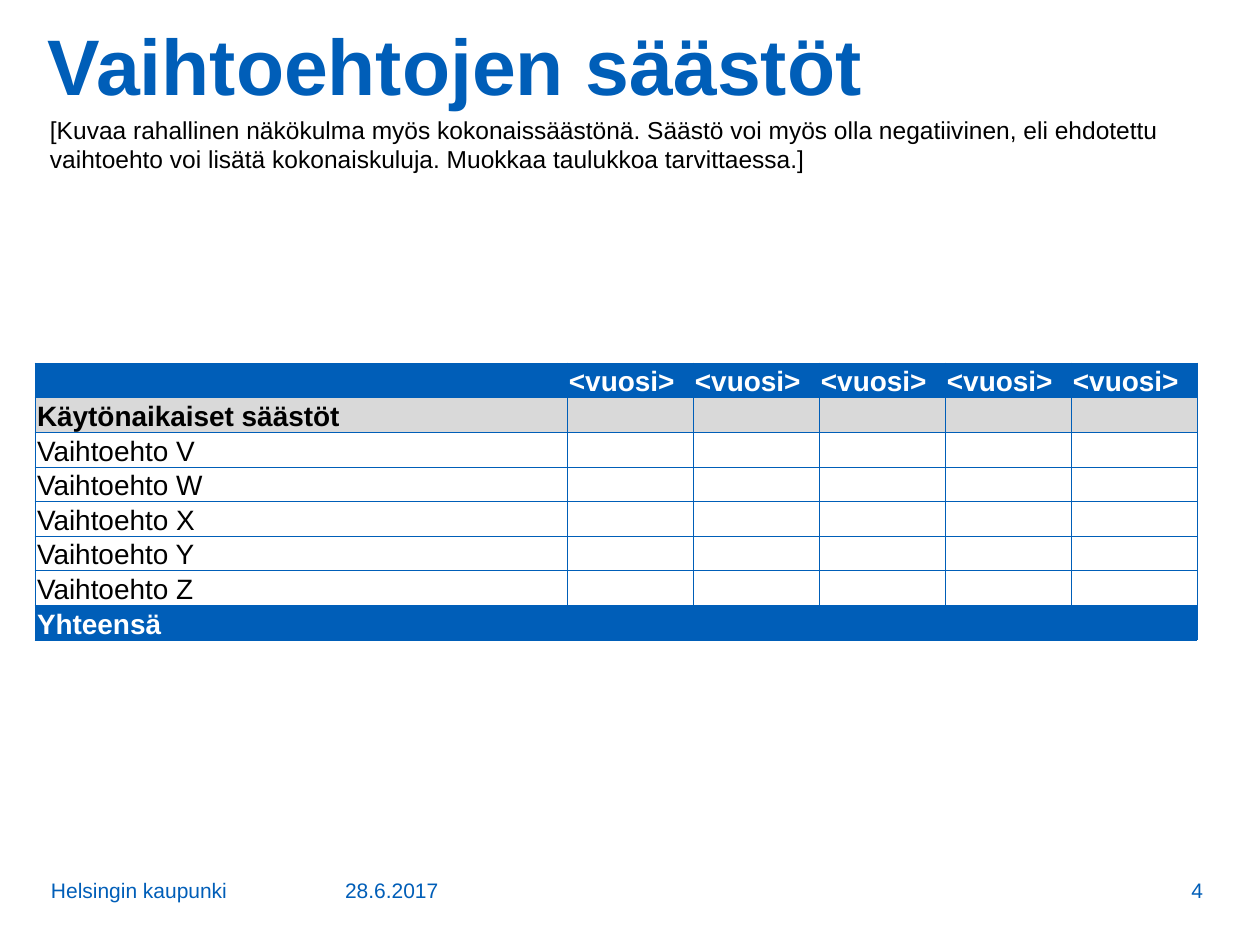
from lxml.etree import SubElement
from pptx import Presentation
from pptx.dml.color import RGBColor
from pptx.enum.text import MSO_ANCHOR, PP_ALIGN
from pptx.oxml.ns import qn
from pptx.util import Pt

EMU = 914400 / 126  # one px
HEX = {"blue": "005EB8", "grey": "D9D9D9", "black": "000000",
       "white": "FFFFFF"}


def style(para, size, color, bold=False):
    para.font.name = "Arial"
    para.font.size = Pt(size)
    para.font.bold = bold
    para.font.color.rgb = RGBColor.from_string(HEX[color])


def add_text(box, text, size, color, inset, anchor=MSO_ANCHOR.TOP, bold=False):
    """Add a wrapped text box; box and inset (side, top and bottom) are in px."""
    frame = slide.shapes.add_textbox(*(int(n * EMU) for n in box)).text_frame
    frame.word_wrap = True
    frame.vertical_anchor = anchor
    side, edge = (int(n * EMU) for n in inset)
    frame.margin_left = frame.margin_right = side
    frame.margin_top = frame.margin_bottom = edge
    para = frame.paragraphs[0]
    para.text = text
    style(para, size, color, bold)
    return para


deck = Presentation()
deck.slide_width = int(1260 * EMU)
deck.slide_height = int(945 * EMU)
slide = deck.slides.add_slide(deck.slide_layouts[6])

title = add_text((35, 31, 1162, 184), "Vaihtoehtojen säästöt", 45, "blue",
                 (13, 0), bold=True)
title.line_spacing = 0.85

# Savings table: a name column and five year columns
names = ["", "Käytönaikaiset säästöt", *(f"Vaihtoehto {c}" for c in "VWXYZ"),
         "Yhteensä"]
years = 5
last = len(names) - 1
frame = slide.shapes.add_table(len(names), years + 1, int(35 * EMU),
                               int(363 * EMU), int(1162 * EMU), int(256 * EMU))
table = frame.table
table.horz_banding = False
for i, col in enumerate(table.columns):
    col.width = int((126 if i else 532) * EMU)

for r, name in enumerate(names):
    table.rows[r].height = int(32 * EMU)
    band = r in (0, last)
    fill = "blue" if band else "grey" if r == 1 else "white"
    for c in range(years + 1):
        cell = table.cell(r, c)
        cell.fill.solid()
        cell.fill.fore_color.rgb = RGBColor.from_string(HEX[fill])
        cell.vertical_anchor = MSO_ANCHOR.BOTTOM
        cell.margin_left = cell.margin_right = int(2 * EMU)
        cell.margin_top = int(EMU)
        cell.margin_bottom = 0
        para = cell.text_frame.paragraphs[0]
        para.text = name if c == 0 else "<vuosi>" if r == 0 else ""
        para.line_spacing = 0.94
        style(para, 16, "white" if band else "black", band or r == 1)

        # Borders go before the fill in the cell properties
        props = cell._tc.get_or_add_tcPr()
        for n, tag in enumerate(("a:lnL", "a:lnR", "a:lnT", "a:lnB")):
            line = SubElement(props, qn(tag), w=str(Pt(0.5)))
            props.insert(n, line)
            paint = SubElement(line, qn("a:solidFill"))
            SubElement(paint, qn("a:srgbClr"), val=HEX["blue"])

# Footer
for box, text, align in [
    ((333, 860, 195, 49), "28.6.2017", PP_ALIGN.LEFT),
    ((39, 845, 294, 64), "Helsingin kaupunki", PP_ALIGN.LEFT),
    ((1066, 860, 149, 49), "4", PP_ALIGN.RIGHT),
]:
    para = add_text(box, text, 12, "blue", (12, 6), MSO_ANCHOR.BOTTOM)
    para.alignment = align

# The note starts clear of the title's descender
add_text(
    (45, 110, 1160, 69),
    "[Kuvaa rahallinen näkökulma myös kokonaissäästönä. Säästö voi myös olla "
    "negatiivinen, eli ehdotettu vaihtoehto voi lisätä kokonaiskuluja. "
    "Muokkaa taulukkoa tarvittaessa.]", 14, "black", (5, 5))

deck.save("out.pptx")
